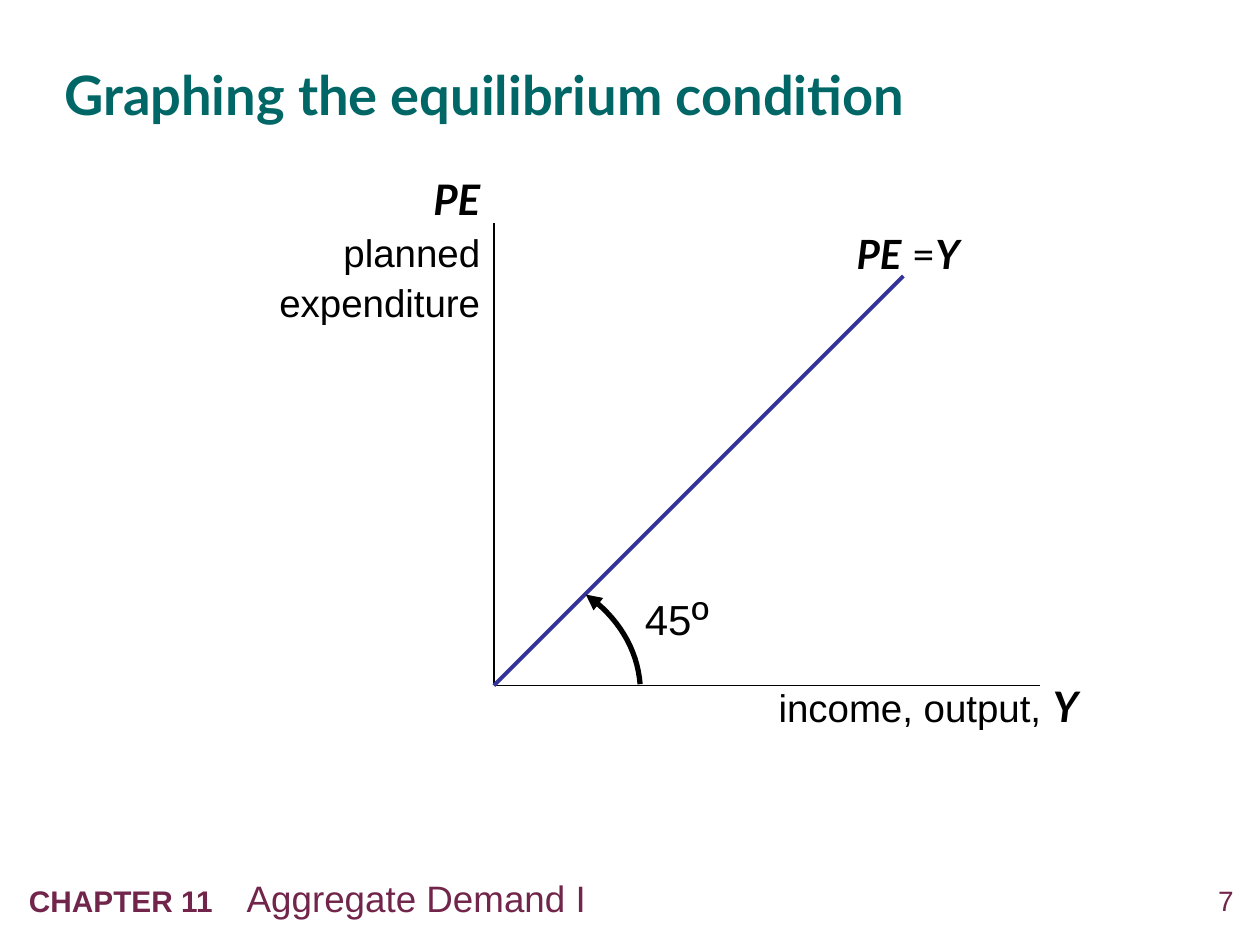
"""Build the slide that graphs the equilibrium condition PE = Y."""
from lxml.etree import SubElement
from pptx import Presentation
from pptx.dml.color import RGBColor
from pptx.enum.shapes import MSO_CONNECTOR
from pptx.enum.text import MSO_ANCHOR, PP_ALIGN
from pptx.oxml.ns import qn
from pptx.util import Pt

BLACK = RGBColor(0x00, 0x00, 0x00)
TEAL = RGBColor(0x00, 0x66, 0x66)
PLUM = RGBColor(0x71, 0x25, 0x4B)
BLUE = RGBColor(0x33, 0x33, 0x99)

PLAIN = ("Arial", False, False)
BOLD = ("Arial", True, False)
TITLE = ("Lato", True, False)
SYMBOL = ("Lato", True, True)
SIGN = ("Lato", False, False)

prs = Presentation()
prs.slide_width, prs.slide_height = Pt(720), Pt(540)
s = prs.slides.add_slide(prs.slide_layouts[6])


def set_font(font, size, style, color):
    font.name, font.bold, font.italic = style
    font.size = Pt(size)
    font.color.rgb = color


def add_text(box, paragraphs, color=BLACK, align=PP_ALIGN.LEFT, inset=True):
    sp = s.shapes.add_textbox(*map(Pt, box))
    tf = sp.text_frame
    tf.word_wrap = True
    if not inset:
        tf.margin_left = tf.margin_right = tf.margin_top = tf.margin_bottom = 0
    for i, runs in enumerate(paragraphs):
        p = tf.paragraphs[0] if i == 0 else tf.add_paragraph()
        p.alignment = align
        for text, size, style in runs:
            r = p.add_run()
            r.text = text
            set_font(p.font if len(runs) == 1 else r.font, size, style, color)
    return tf


add_text((665.3, 504.7, 39.6, 23), [[("7", 16, PLAIN)]], PLUM, PP_ALIGN.RIGHT, False)

tf = add_text((9.4, 496.8, 589, 32.4),
              [[("CHAPTER 11\t", 17, BOLD), ("Aggregate Demand I", 21, PLAIN)]], PLUM)
tabs = SubElement(tf.paragraphs[0]._p.get_or_add_pPr(), qn("a:tabLst"))
SubElement(tabs, qn("a:tab"), pos=str(Pt(124.5)), algn="l")

tf = add_text((36.7, 18.7, 649.4, 74.2),
              [[("Graphing the equilibrium condition", 31, TITLE)]], TEAL, inset=False)
tf.vertical_anchor = MSO_ANCHOR.MIDDLE
tf.paragraphs[0].line_spacing = 0.9

X0, Y0 = 282.2, 391.7
for x, y, color, width in ((X0, 127.4, BLACK, 1), (594, Y0, BLACK, 1),
                           (X0 + 234, Y0 - 234, BLUE, 2.25)):
    line = s.shapes.add_connector(MSO_CONNECTOR.STRAIGHT, Pt(X0), Pt(Y0), Pt(x), Pt(y))
    line.line.color.rgb = color
    line.line.width = Pt(width)
    SubElement(line._element.spPr, qn("a:effectLst"))

add_text((437.8, 385.2, 203.8, 36),
         [[("income, output,", 22, PLAIN), (" ", 24, PLAIN), ("Y", 24, SYMBOL)]])
tf = add_text((118.8, 95.8, 162.7, 92.2),
              [[("PE", 24, SYMBOL)], [("planned", 22, PLAIN)], [("expenditure", 22, PLAIN)]],
              align=PP_ALIGN.RIGHT)
for p in tf.paragraphs[1:]:
    p.space_before = Pt(2.5)
add_text((482.4, 127.4, 88.6, 35.3),
         [[("PE", 23, SYMBOL), (" =", 23, SIGN), ("Y", 23, SYMBOL)]])

controls = ((334.8, 339.8), (352.8, 352.1), (364.3, 370.8), (365.8, 391))
STEPS = 16
points = []
for i in range(STEPS + 1):
    t = i / STEPS
    weights = ((1 - t) ** 3, 3 * t * (1 - t) ** 2, 3 * t ** 2 * (1 - t), t ** 3)
    points.append(tuple(Pt(sum(w * c for w, c in zip(weights, axis)))
                        for axis in zip(*controls)))
fb = s.shapes.build_freeform(*points[0])
fb.add_line_segments(points[1:], close=False)
arc = fb.convert_to_shape()
arc.shadow.inherit = False
arc.fill.background()
arc.line.color.rgb = BLACK
arc.line.width = Pt(3)
SubElement(arc.line._get_or_add_ln(), qn("a:headEnd"), type="triangle")

add_text((361.4, 332.6, 54, 39.6), [[("45", 24, PLAIN), ("º", 27, PLAIN)]])

prs.save("out.pptx")
